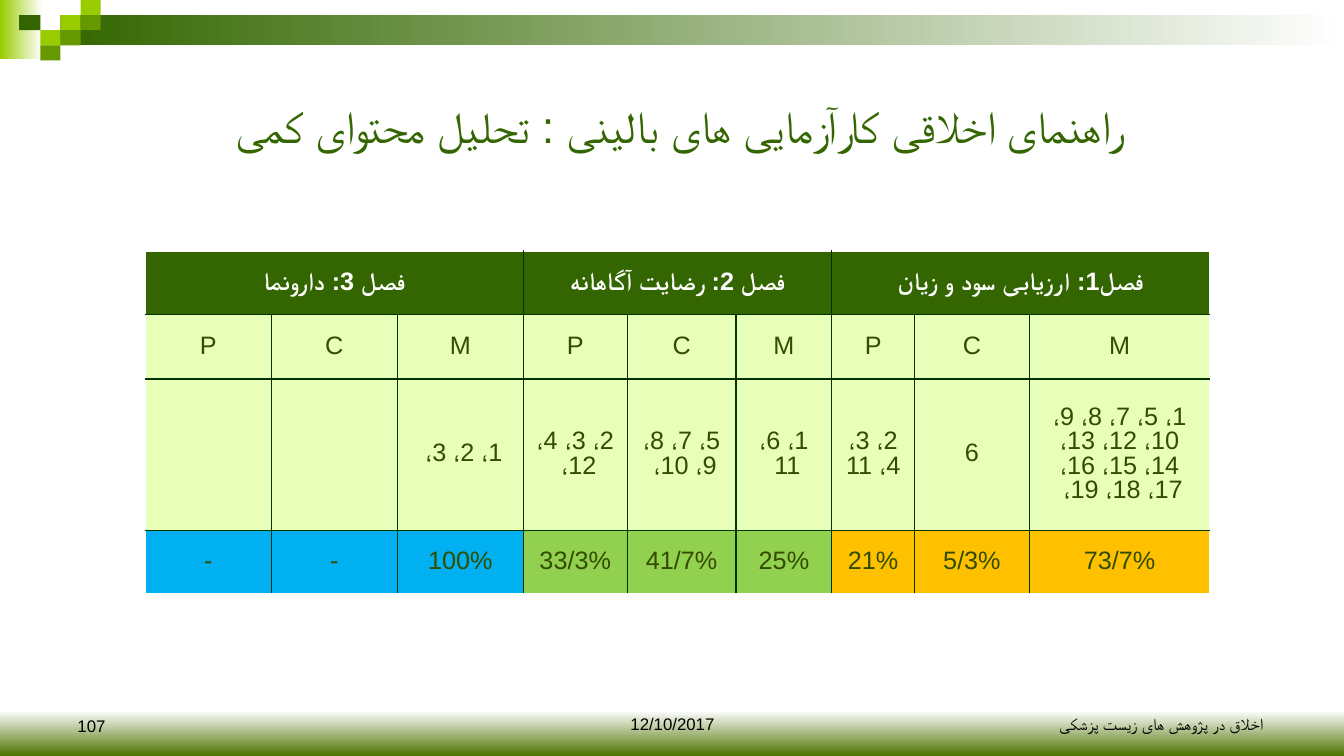
from lxml import etree
from pptx import Presentation
from pptx.dml.color import RGBColor
from pptx.enum.shapes import MSO_SHAPE
from pptx.enum.text import MSO_ANCHOR, PP_ALIGN
from pptx.oxml.ns import qn
from pptx.util import Inches, Pt

RECT = MSO_SHAPE.RECTANGLE
MID, LOW = MSO_ANCHOR.MIDDLE, MSO_ANCHOR.BOTTOM
LEFT, MIDST, RIGHT = PP_ALIGN.LEFT, PP_ALIGN.CENTER, PP_ALIGN.RIGHT

THEME = {
    "white": "FFFFFF", "black": "000000", "dark": "336600", "leaf": "669900",
    "lime": "99CC00", "moss": "4D7300", "line": "003300", "ink": "334C00",
    "pale": "E7FFB8", "blue": "00B0F0", "green": "92D050", "gold": "FFC000",
    "font": "Arial", "foot": "Montserrat",
    "title": 32, "body": 18, "small": 12,
}
WIDE, HIGH = 13.33, 7.5
STEP, RISE = 0.2, 0.15


def paint(fill, *stops):
    if len(stops) == 1:
        fill.solid()
        fill.fore_color.rgb = RGBColor.from_string(THEME[stops[0]])
        return
    fill.gradient()
    for stop, (place, tint) in zip(fill.gradient_stops, stops):
        stop.position = place
        stop.color.rgb = RGBColor.from_string(THEME[tint])


def write(frame, text, tint, size, align=MIDST, rtl=True, face="font", bold=False, space=None):
    par = frame.paragraphs[0]
    for name, value in {"alignment": align, "line_spacing": space}.items():
        setattr(par, name, value)
    par._p.get_or_add_pPr().set("rtl", str(int(rtl)))
    run = par.add_run()
    run.text = text
    form = {"name": THEME[face], "size": Pt(THEME[size]), "bold": bold}
    for name, value in form.items():
        setattr(run.font, name, value)
    run.font.color.rgb = RGBColor.from_string(THEME[tint])
    etree.SubElement(run._r.get_or_add_rPr(), qn("a:cs"), typeface=THEME[face])


deck = Presentation()
deck.slide_width, deck.slide_height = Inches(WIDE), Inches(HIGH)
slide = deck.slides.add_slide(deck.slide_layouts[5])
back = slide.background.fill
paint(back, (0.94, "white"), (1, "moss"))
back.gradient_angle = 270

TILES = [
    (0, 0, 2.1, 3.9, [(0, "lime"), (1, "white")]),
    (3, 1, WIDE / STEP - 3, 2, [(0, "dark"), (1, "white")]),
    (3, 1, 1, 1, ["lime"]), (4, 0, 1, 1, ["lime"]), (4, 1, 1, 1, ["leaf"]),
    (2, 2, 1, 1, ["lime"]), (0.95, 1, 1.05, 1, ["dark"]),
    (3, 2, 1, 1, ["leaf"]), (2, 3, 1, 1, ["leaf"]),
]
for col, row, wide, high, stops in TILES:
    tile = slide.shapes.add_shape(
        RECT, Inches(col * STEP), Inches(row * RISE), Inches(wide * STEP), Inches(high * RISE))
    tile.shadow.inherit = False
    tile.line.fill.background()
    paint(tile.fill, *stops)
    if len(stops) > 1:
        tile.fill.gradient_angle = 0

title = slide.shapes.title
place = {"left": WIDE * 0.05, "top": HIGH / 15, "width": WIDE * 0.9, "height": HIGH / 5}
for name, value in place.items():
    setattr(title, name, Inches(value))
title.text_frame.vertical_anchor = MID
write(title.text_frame, "راهنمای اخلاقی کارآزمایی های بالینی : تحلیل محتوای کمی ", "dark", "title")

FEET = [
    (4.56, 4.22, 0.5, "12/10/2017", MIDST, "font"),
    (9.56, 3.11, 0.5, "اخلاق در پژوهش های زیست پزشکی ", RIGHT, "foot"),
    (0.67, 3.11, 0.52, "107", LEFT, "font"),
]
for left, wide, high, text, align, face in FEET:
    box = slide.shapes.add_textbox(Inches(left), Inches(6.83), Inches(wide), Inches(high))
    for name, value in {"word_wrap": True, "vertical_anchor": LOW}.items():
        setattr(box.text_frame, name, value)
    write(box.text_frame, text, "black", "small", align, False, face)

COLS = [1.25, 1.25, 1.25, 1.03, 1.08, 0.95, 0.82, 1.14, 1.79]
ROWS = [0.63, 0.64, 1.5, 0.63]
HEADS = ["فصل 3: دارونما", "فصل 2: رضایت آگاهانه", "فصل1: ارزیابی سود و زیان"]
BANDS = ["blue", "green", "gold"]
SPAN = len(COLS) // len(HEADS)
CELLS = [
    [text for head in HEADS for text in (head, "", "")],
    list("PCM" * len(HEADS)),
    ["", "", "1، 2، 3، ", "2، 3، 4، 12، ", "5، 7، 8، 9، 10، ", "1، 6، 11 ",
     "2، 3، 4، 11", "6", "1، 5، 7، 8، 9، 10، 12، 13، 14، 15، 16، 17، 18، 19، "],
    ["-", "-", "100%", "33/3%", "41/7%", "25%", "21%", "5/3%", "73/7%"],
]
table = slide.shapes.add_table(
    len(ROWS), len(COLS), Inches(1.44), Inches(2.49),
    Inches(sum(COLS)), Inches(sum(ROWS))).table
table.first_row = table.horz_banding = False
for col, wide in zip(table.columns, COLS):
    col.width = Inches(wide)
for row, high in zip(table.rows, ROWS):
    row.height = Inches(high)
for col in range(0, len(COLS), SPAN):
    table.cell(0, col).merge(table.cell(0, col + SPAN - 1))

for row, texts in enumerate(CELLS):
    for col, text in enumerate(texts):
        cell = table.cell(row, col)
        if cell.is_spanned:
            continue
        head = row == 0
        paint(cell.fill, ["dark", "pale", "pale", BANDS[col // SPAN]][row])
        cell.vertical_anchor = MID
        if text:
            write(cell.text_frame, text, "white" if head else "ink", "body", bold=head, space=0.87)
        edges = {
            "L": col == 0, "R": col + cell.span_width == len(COLS),
            "T": head, "B": row == len(ROWS) - 1,
        }
        for spot, (side, outer) in enumerate(edges.items()):
            edge = etree.Element(qn("a:ln" + side), w=str(Pt(1)))
            fill = etree.SubElement(edge, qn("a:solidFill"))
            etree.SubElement(fill, qn("a:srgbClr"), val=THEME["white" if outer else "line"])
            cell._tc.get_or_add_tcPr().insert(spot, edge)

deck.save("out.pptx")
